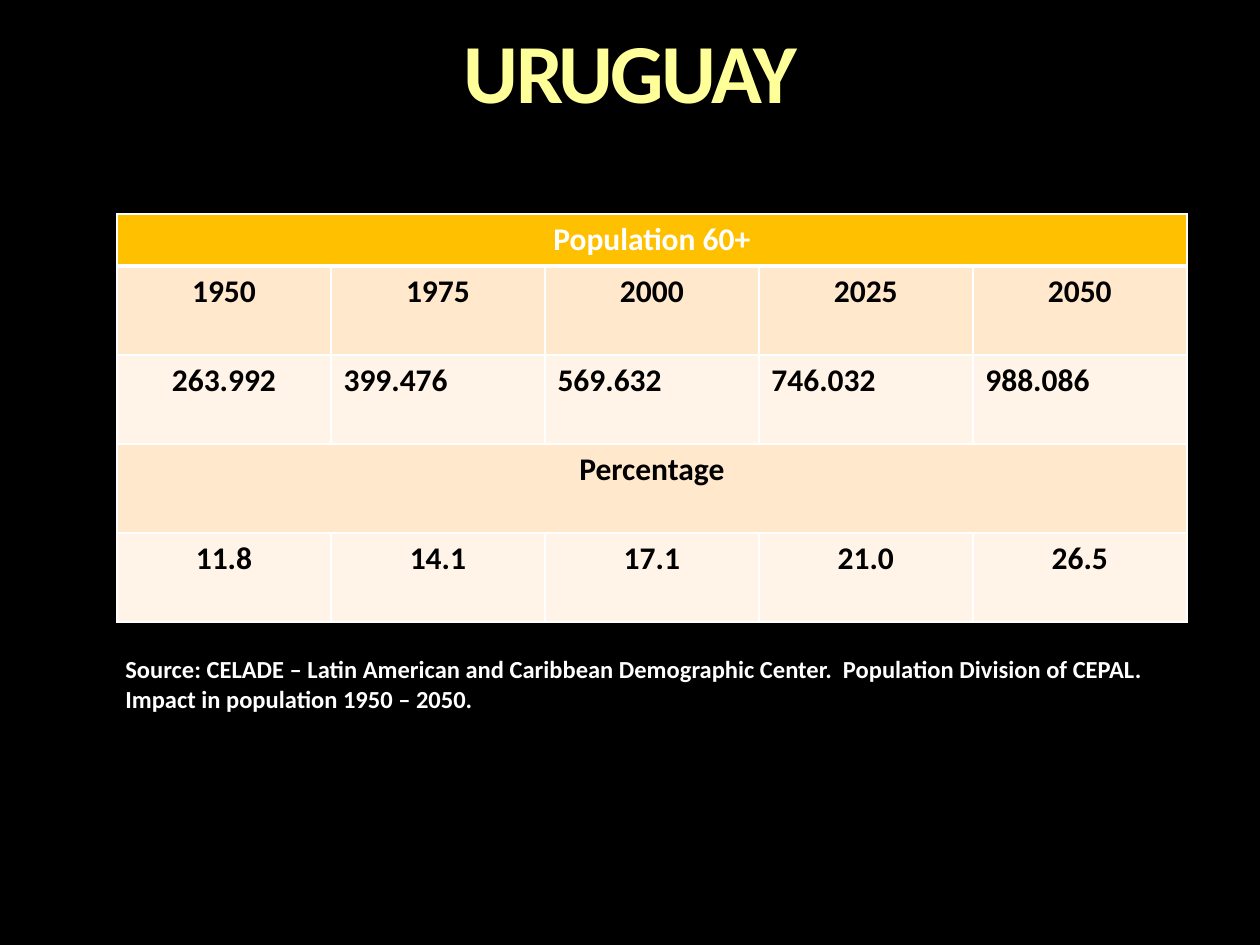
"""Build a slide with a table of Uruguay's population aged 60 and over."""
from lxml.etree import fromstring
from pptx import Presentation
from pptx.dml.color import RGBColor
from pptx.enum.text import PP_ALIGN
from pptx.oxml.ns import nsdecls
from pptx.util import Pt

PX = 914400 // 126
YEARS = ["1950", "1975", "2000", "2025", "2050"]
PEOPLE = ["263.992", "399.476", "569.632", "746.032", "988.086"]
SHARES = ["11.8", "14.1", "17.1", "21.0", "26.5"]
ROWS = [["Population 60+"], YEARS, PEOPLE, ["Percentage"], SHARES]
FILLS = ["FFC000", "FFE8CC", "FFF4E7", "FFE8CC", "FFF4E7"]
HEADER_HEIGHT, ROW_HEIGHT, COLUMN_WIDTH = 52, 89, 214


def write(frame, text, size=18, color="000000", align=PP_ALIGN.LEFT, spacing=None, tracking=None):
    frame.word_wrap = True
    para = frame.paragraphs[0]
    para.alignment = align
    if spacing:
        para.line_spacing = spacing
    span = para.add_run()
    span.text = text
    span.font.name = "Calibri"
    span.font.size = Pt(size)
    span.font.bold = True
    span.font.color.rgb = RGBColor.from_string(color)
    if tracking:
        span._r.get_or_add_rPr().set("spc", str(tracking))


def style_cell(cell, color, top, bottom):
    cell.fill.solid()
    cell.fill.fore_color.rgb = RGBColor.from_string(color)
    widths = {"lnL": 1, "lnR": 1, "lnT": top, "lnB": bottom}
    for place, (side, width) in enumerate(widths.items()):
        border = fromstring(
            f'<a:{side} {nsdecls("a")} w="{Pt(width)}"><a:solidFill>'
            f'<a:srgbClr val="FFFFFF"/></a:solidFill></a:{side}>')
        cell._tc.get_or_add_tcPr().insert(place, border)


deck = Presentation()
deck.slide_width, deck.slide_height = 1260 * PX, 945 * PX
page = deck.slides.add_slide(deck.slide_layouts[6])
page.background.fill.solid()
page.background.fill.fore_color.rgb = RGBColor.from_string("000000")

title = page.shapes.add_textbox(53 * PX, 31 * PX, 1155 * PX, 92 * PX).text_frame
title.margin_left = title.margin_right = title.margin_top = title.margin_bottom = 0
write(title, "URUGUAY", size=48, color="FFFF99", align=PP_ALIGN.CENTER, spacing=0.9, tracking=-150)

table_height = HEADER_HEIGHT + (len(ROWS) - 1) * ROW_HEIGHT
table = page.shapes.add_table(
    len(ROWS), len(YEARS), 117 * PX, 214 * PX,
    len(YEARS) * COLUMN_WIDTH * PX, table_height * PX).table
for column in table.columns:
    column.width = COLUMN_WIDTH * PX

for index, (texts, fill) in enumerate(zip(ROWS, FILLS)):
    table.rows[index].height = (ROW_HEIGHT if index else HEADER_HEIGHT) * PX
    for column in range(len(YEARS)):
        style_cell(table.cell(index, column), fill,
                   top=3 if index == 1 else 1, bottom=3 if index == 0 else 1)
    if len(texts) == 1:
        table.cell(index, 0).merge(table.cell(index, len(YEARS) - 1))
    for column, text in enumerate(texts):
        left_aligned = texts is PEOPLE and column > 0
        write(table.cell(index, column).text_frame, text,
              color="000000" if index else "FFFFFF",
              align=PP_ALIGN.LEFT if left_aligned else PP_ALIGN.CENTER)

source = page.shapes.add_textbox(113 * PX, 648 * PX, 1111 * PX, 72 * PX).text_frame
write(source, "Source: CELADE – Latin American and Caribbean Demographic Center.  "
      "Population Division of CEPAL.  Impact in population 1950 – 2050.",
      size=14, color="FFFFFF")

deck.save("out.pptx")
